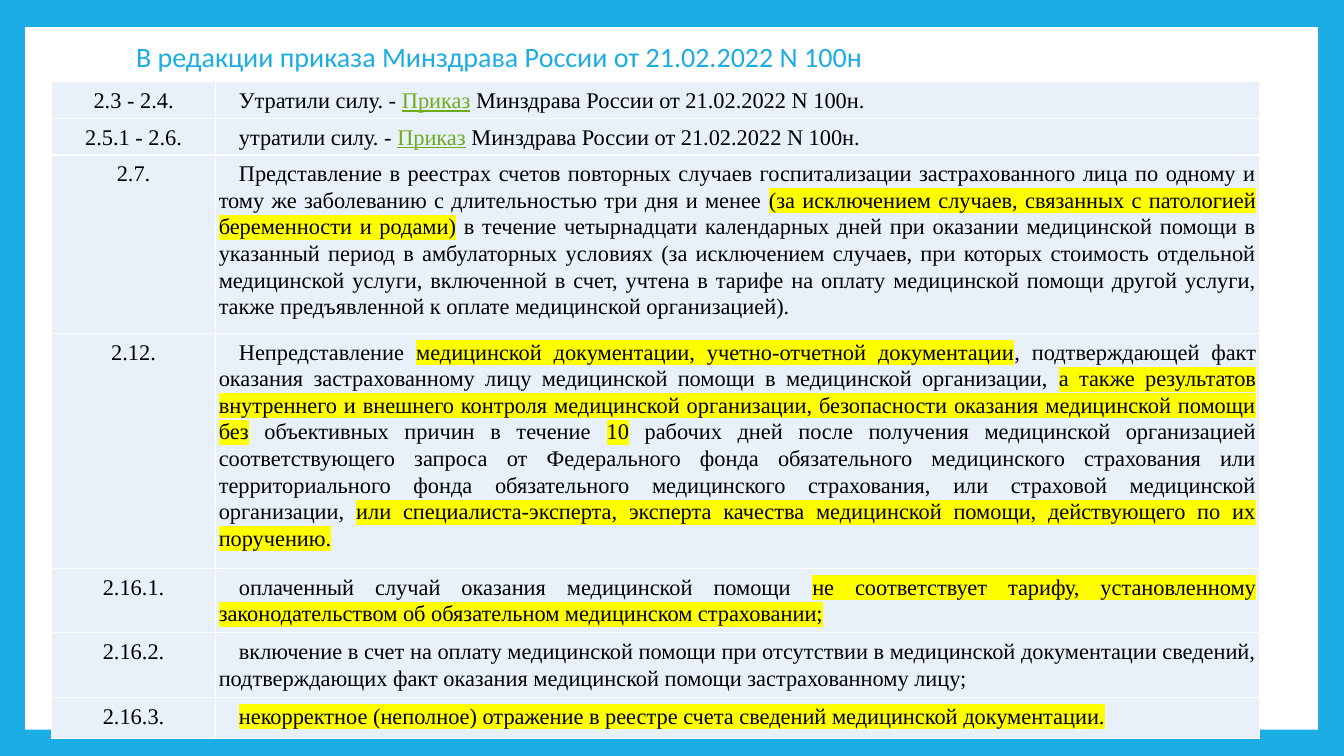
from dataclasses import dataclass

from lxml.etree import SubElement
from pptx import Presentation
from pptx.dml.color import RGBColor
from pptx.enum.shapes import MSO_SHAPE
from pptx.enum.text import MSO_ANCHOR, MSO_AUTO_SIZE, PP_ALIGN
from pptx.oxml.ns import qn
from pptx.util import Inches, Pt


@dataclass(frozen=True)
class Theme:
    accent: str = "1CADE4"
    paper: str = "FFFFFF"
    cell: str = "E8F1FA"
    ink: str = "000000"
    link: str = "6EAC1C"
    marker: str = "FFFF00"
    title_font: str = "Calibri"
    body_font: str = "Times New Roman"
    title_size: int = 20
    body_size: int = 16
    border: int = 1


THEME = Theme()
WIDTH, HEIGHT = 13.33, 7.5
PLAIN, MARK, LINK = "plain", "mark", "link"

TITLE = "В редакции приказа Минздрава России от 21.02.2022 N 100н"
ORDER = [("Приказ", LINK), (" Минздрава России от 21.02.2022 N 100н.", PLAIN)]

# Each row: height in inches, clause number, runs of the description
COLUMNS = [1.63, 10.35]
ROWS = [
    (0.36, "2.3 - 2.4.", [("Утратили силу. - ", PLAIN)] + ORDER),
    (0.36, "2.5.1 - 2.6.", [("утратили силу. - ", PLAIN)] + ORDER),
    (1.77, "2.7.", [
        ("Представление в реестрах счетов повторных случаев госпитализации "
         "застрахованного лица по одному и тому же заболеванию с длительностью "
         "три дня и менее ", PLAIN),
        ("(за исключением случаев, связанных с патологией беременности и родами)", MARK),
        (" в течение четырнадцати календарных дней при оказании медицинской помощи "
         "в указанный период в амбулаторных условиях (за исключением случаев, при "
         "которых стоимость отдельной медицинской услуги, включенной в счет, учтена "
         "в тарифе на оплату медицинской помощи другой услуги, также предъявленной "
         "к оплате медицинской организацией).", PLAIN)]),
    (2.33, "2.12.", [
        ("Непредставление ", PLAIN),
        ("медицинской документации, учетно-отчетной документации", MARK),
        (", подтверждающей факт оказания застрахованному лицу медицинской помощи "
         "в медицинской организации, ", PLAIN),
        ("а также результатов внутреннего и внешнего контроля медицинской "
         "организации, безопасности оказания медицинской помощи без", MARK),
        (" объективных причин в течение ", PLAIN),
        ("10", MARK),
        (" рабочих дней после получения медицинской организацией соответствующего "
         "запроса от Федерального фонда обязательного медицинского страхования или "
         "территориального фонда обязательного медицинского страхования, или "
         "страховой медицинской организации, ", PLAIN),
        ("или специалиста-эксперта, эксперта качества медицинской помощи, "
         "действующего по их поручению.", MARK)]),
    (0.64, "2.16.1.", [
        ("оплаченный случай оказания медицинской помощи ", PLAIN),
        ("не соответствует тарифу, установленному законодательством об "
         "обязательном медицинском страховании;", MARK)]),
    (0.64, "2.16.2.", [
        ("включение в счет на оплату медицинской помощи при отсутствии в "
         "медицинской документации сведений, подтверждающих факт оказания "
         "медицинской помощи застрахованному лицу;", PLAIN)]),
    (0.41, "2.16.3.", [
        ("некорректное (неполное) отражение в реестре счета сведений "
         "медицинской документации.", MARK)]),
]


def rgb(color):
    return RGBColor.from_string(color)


def add_color(parent, tag, color):
    SubElement(SubElement(parent, qn(tag)), qn("a:srgbClr")).set("val", color)


def style_run(r, size, font, color):
    r.font.size = Pt(size)
    r.font.color.rgb = rgb(color)
    r.font.name = font


def add_frame(s):
    """White sheet over the coloured background, behind everything else."""
    s.background.fill.solid()
    s.background.fill.fore_color.rgb = rgb(THEME.accent)
    sp = s.shapes.add_shape(MSO_SHAPE.RECTANGLE, Inches(0.25), Inches(0.27),
                            Inches(12.82), Inches(6.97))
    sp.shadow.inherit = False
    sp.fill.solid()
    sp.fill.fore_color.rgb = rgb(THEME.paper)
    sp.line.fill.background()
    s.shapes.title.element.addprevious(sp.element)


def set_title(s, text):
    sp = s.shapes.title
    sp.left, sp.top, sp.width, sp.height = map(Inches, (1.25, 0.34, 10.8, 0.8))
    tf = sp.text_frame
    tf.text = text
    tf.word_wrap = True
    tf.auto_size = MSO_AUTO_SIZE.NONE
    tf.vertical_anchor = MSO_ANCHOR.TOP
    tf.margin_top = Inches(0.09)
    p = tf.paragraphs[0]
    p.alignment = PP_ALIGN.LEFT
    p.line_spacing = 0.9
    style_run(p.runs[0], THEME.title_size, THEME.title_font, THEME.accent)


def add_borders(cell):
    tc_pr = cell._tc.get_or_add_tcPr()
    for i, side in enumerate(("a:lnL", "a:lnR", "a:lnT", "a:lnB")):
        ln = SubElement(tc_pr, qn(side), w=str(Pt(THEME.border)))
        add_color(ln, "a:solidFill", THEME.paper)
        tc_pr.insert(i, ln)


def fill_cell(cell, runs, alignment, indent=0):
    cell.fill.solid()
    cell.fill.fore_color.rgb = rgb(THEME.cell)
    cell.margin_left = cell.margin_right = Inches(0.03)
    cell.margin_top = cell.margin_bottom = Inches(0.05)
    add_borders(cell)
    p = cell.text_frame.paragraphs[0]
    p.alignment = alignment
    p.line_spacing = 1.07
    p._p.get_or_add_pPr().set("indent", str(Inches(indent)))
    for text, kind in runs:
        r = p.add_run()
        r.text = text
        style_run(r, THEME.body_size, THEME.body_font,
                  THEME.link if kind == LINK else THEME.ink)
        if kind == LINK:
            r.font.underline = True
        if kind == MARK:
            r_pr = r.font._element
            add_color(r_pr, "a:highlight", THEME.marker)
            r_pr.find(qn("a:solidFill")).addnext(r_pr.find(qn("a:highlight")))


def add_clauses(s):
    total = sum(height for height, _, _ in ROWS)
    table = s.shapes.add_table(len(ROWS), len(COLUMNS), Inches(0.51), Inches(0.81),
                               Inches(sum(COLUMNS)), Inches(total)).table
    for column, width in zip(table.columns, COLUMNS):
        column.width = Inches(width)
    for i, (height, number, runs) in enumerate(ROWS):
        table.rows[i].height = Inches(height)
        fill_cell(table.cell(i, 0), [(number, PLAIN)], PP_ALIGN.CENTER)
        fill_cell(table.cell(i, 1), runs, PP_ALIGN.JUSTIFY, indent=0.2)


def main():
    prs = Presentation()
    prs.slide_width, prs.slide_height = Inches(WIDTH), Inches(HEIGHT)
    s = prs.slides.add_slide(prs.slide_layouts[5])
    add_frame(s)
    set_title(s, TITLE)
    add_clauses(s)
    prs.save("out.pptx")


if __name__ == "__main__":
    main()
